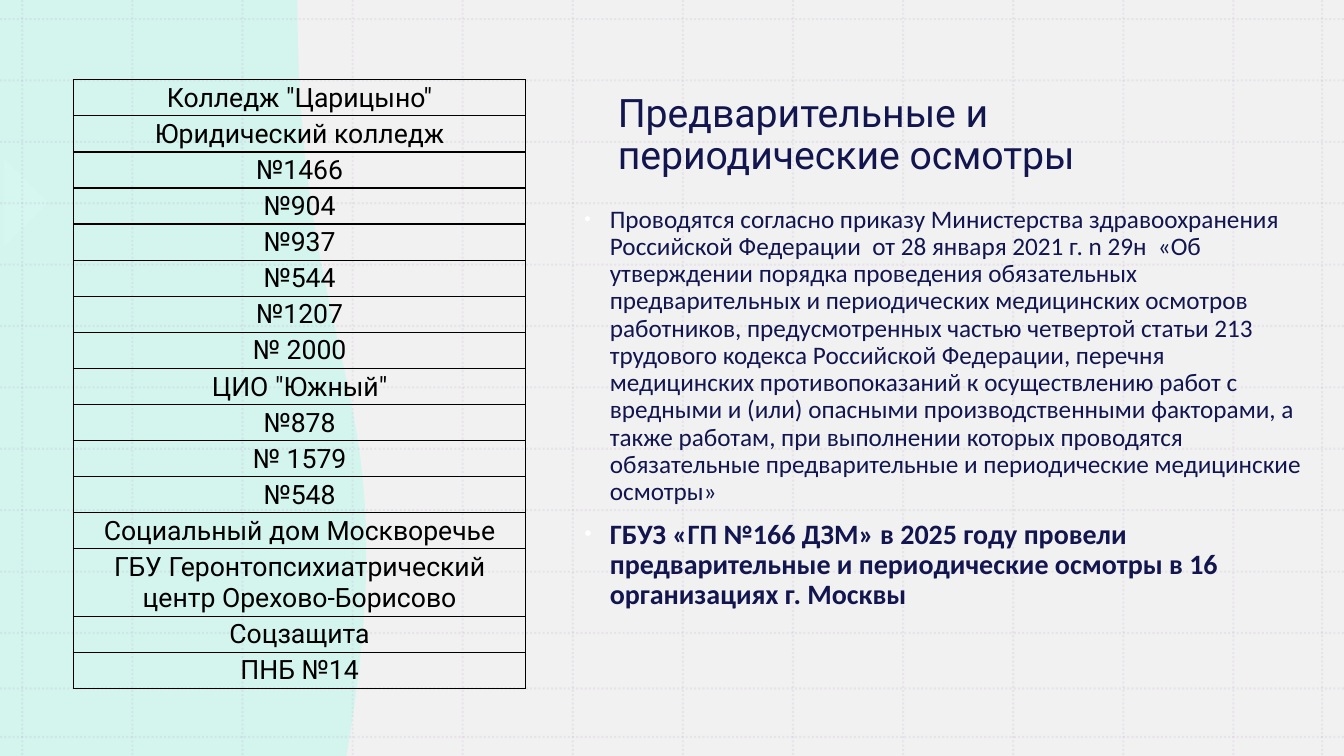
from dataclasses import dataclass

from lxml.etree import SubElement
from pptx import Presentation
from pptx.dml.color import RGBColor
from pptx.enum.dml import MSO_LINE
from pptx.enum.shapes import MSO_CONNECTOR, MSO_SHAPE
from pptx.enum.text import MSO_ANCHOR, PP_ALIGN
from pptx.oxml.ns import qn
from pptx.util import Cm, Pt


@dataclass(frozen=True)
class Theme:
    backdrop: str = "EEEEEE"
    wave: str = "CDF7EE"
    white: str = "FFFFFF"
    grid: str = "B495C2"
    ink: str = "12154E"
    black: str = "000000"
    heading_font: str = "Roboto"
    body_font: str = "Calibri"
    title_size: float = 28
    order_size: float = 18
    result_size: float = 20
    table_size: float = 19
    grid_width: float = 1.5
    border_width: float = 1


THEME = Theme()
SLIDE_WIDTH, SLIDE_HEIGHT = 33.87, 19.05

TITLE = "Предварительные и периодические осмотры"
ORDER = (
    "Проводятся согласно приказу Министерства здравоохранения Российской Федерации  "
    "от 28 января 2021 г. n 29н  «Об утверждении порядка проведения обязательных "
    "предварительных и периодических медицинских осмотров работников, предусмотренных "
    "частью четвертой статьи 213 трудового кодекса Российской Федерации, перечня "
    "медицинских противопоказаний к осуществлению работ с вредными и (или) опасными "
    "производственными факторами, а также работам, при выполнении которых проводятся "
    "обязательные предварительные и периодические медицинские осмотры»"
)
RESULT = (
    "ГБУЗ «ГП №166 ДЗМ» в 2025 году провели предварительные и периодические "
    "осмотры в 16 организациях г. Москвы"
)
ORGANIZATIONS = [
    'Колледж "Царицыно"', "Юридический колледж", "№1466", "№904", "№937", "№544",
    "№1207", "№ 2000", 'ЦИО "Южный"', "№878", "№ 1579", "№548",
    "Социальный дом Москворечье",
    "ГБУ Геронтопсихиатрический центр Орехово-Борисово",
    "Соцзащита", "ПНБ №14",
]
TWO_LINE_ROW = 13


def color(value):
    return RGBColor.from_string(value)


def set_opacity(shape, percent):
    for node in list(shape._element.spPr.iter(qn("a:srgbClr"))):
        SubElement(node, qn("a:alpha"), val=str(percent * 1000))


def write_text(paragraph, text, *, font, size, fill, bold=False, align=None,
               line_spacing=None, space_before=None):
    paragraph.alignment = align
    paragraph.line_spacing = line_spacing
    if space_before:
        paragraph.space_before = Pt(space_before)
    run = paragraph.add_run()
    run.text = text
    run.font.name = font
    run.font.size = Pt(size)
    run.font.bold = bold
    run.font.color.rgb = color(fill)


def add_bullet(paragraph):
    properties = paragraph._p.get_or_add_pPr()
    properties.set("marL", str(Cm(0.64)))
    properties.set("indent", str(-Cm(0.64)))
    bullet_color = SubElement(properties, qn("a:buClr"))
    SubElement(bullet_color, qn("a:srgbClr"), val=THEME.white)
    SubElement(properties, qn("a:buSzPct"), val="75000")
    SubElement(properties, qn("a:buFont"), typeface="Arial")
    SubElement(properties, qn("a:buChar"), char="•")


def add_text_frame(slide, left, top, width, height, anchor):
    box = slide.shapes.add_textbox(Cm(left), Cm(top), Cm(width), Cm(height))
    box.text_frame.word_wrap = True
    box.text_frame.vertical_anchor = anchor
    return box.text_frame


def add_plain_shape(slide, kind, left, top, width, height, fill, opacity, rotation=0):
    shape = slide.shapes.add_shape(kind, Cm(left), Cm(top), Cm(width), Cm(height))
    shape.shadow.inherit = False
    shape.fill.solid()
    shape.fill.fore_color.rgb = color(fill)
    shape.line.fill.background()
    shape.rotation = rotation
    set_opacity(shape, opacity)


def add_grid_line(slide, x1, y1, x2, y2):
    line = slide.shapes.add_connector(
        MSO_CONNECTOR.STRAIGHT, Cm(x1), Cm(y1), Cm(x2), Cm(y2))
    line.line.color.rgb = color(THEME.grid)
    line.line.width = Pt(THEME.grid_width)
    line.line.dash_style = MSO_LINE.ROUND_DOT
    set_opacity(line, 15)
    SubElement(line._element.spPr, qn("a:effectLst"))


def build_backdrop(slide, left, top, width, height):
    add_plain_shape(slide, MSO_SHAPE.RECTANGLE, left, top, width, height,
                    THEME.backdrop, 80)
    add_plain_shape(slide, MSO_SHAPE.RIGHT_TRIANGLE, left - 0.69, top + 4.32,
                    1.57, 1.57, THEME.white, 75, rotation=225)
    # The wave is turned on its side, so its own width runs down the slide.
    depth = 9.35
    add_plain_shape(slide, MSO_SHAPE.FLOWCHART_DOCUMENT, left + (depth - height) / 2,
                    top + (height - depth) / 2, height, depth,
                    THEME.wave, 80, rotation=270)


def build_grid(slide, left, top, width, height):
    columns = [0.56 + 2.775 * index for index in range(12)] + [33.32]
    rows = [0.48 + 1.547 * index for index in range(11)] + [17.35, 18.57]
    for x in columns:
        add_grid_line(slide, left + x, top, left + x, top + height)
    for y in rows:
        add_grid_line(slide, left, top + y, left + width, top + y)


def build_title(slide, left, top, width, height):
    frame = add_text_frame(slide, left, top, width, height, MSO_ANCHOR.MIDDLE)
    write_text(frame.paragraphs[0], TITLE, font=THEME.heading_font,
               size=THEME.title_size, fill=THEME.ink, line_spacing=0.9)


def build_body(slide, left, top, width, height):
    frame = add_text_frame(slide, left, top, width, height, MSO_ANCHOR.TOP)
    order, result = frame.paragraphs[0], frame.add_paragraph()
    for paragraph in (order, result):
        add_bullet(paragraph)
    body_format = dict(font=THEME.body_font, fill=THEME.ink, line_spacing=0.9)
    write_text(order, ORDER, size=THEME.order_size, **body_format)
    write_text(result, RESULT, size=THEME.result_size, bold=True, space_before=10,
               **body_format)


def add_borders(cell):
    properties = cell._tc.get_or_add_tcPr()
    for side in ("lnL", "lnR", "lnT", "lnB"):
        border = SubElement(properties, qn(f"a:{side}"), w=str(Pt(THEME.border_width)))
        fill = SubElement(border, qn("a:solidFill"))
        SubElement(fill, qn("a:srgbClr"), val=THEME.black)


def build_organizations(slide, left, top, width, height):
    tall_row = 1.7
    row_height = (height - tall_row) / (len(ORGANIZATIONS) - 1)
    table = slide.shapes.add_table(len(ORGANIZATIONS), 1, Cm(left), Cm(top),
                                   Cm(width), Cm(height)).table
    table.first_row = table.horz_banding = False
    for index, name in enumerate(ORGANIZATIONS):
        table.rows[index].height = Cm(tall_row if index == TWO_LINE_ROW else row_height)
        cell = table.cell(index, 0)
        cell.margin_left = cell.margin_right = cell.margin_top = Cm(0.03)
        cell.margin_bottom = 0
        cell.vertical_anchor = MSO_ANCHOR.MIDDLE
        add_borders(cell)
        cell.fill.background()
        write_text(cell.text_frame.paragraphs[0], name, font=THEME.heading_font,
                   size=THEME.table_size, fill=THEME.black, align=PP_ALIGN.CENTER)


def main():
    presentation = Presentation()
    presentation.slide_width = Cm(SLIDE_WIDTH)
    presentation.slide_height = Cm(SLIDE_HEIGHT)
    slide = presentation.slides.add_slide(presentation.slide_layouts[6])
    slide.background.fill.solid()
    slide.background.fill.fore_color.rgb = color(THEME.white)
    build_backdrop(slide, 0, 0, SLIDE_WIDTH, SLIDE_HEIGHT)
    build_grid(slide, 0, 0, SLIDE_WIDTH, SLIDE_HEIGHT)
    build_title(slide, 15.32, 1.88, 16.69, 3.07)
    build_body(slide, 14.48, 5.08, 18.8, 12.27)
    build_organizations(slide, 1.85, 2.01, 11.4, 15.34)
    presentation.save("out.pptx")


if __name__ == "__main__":
    main()
